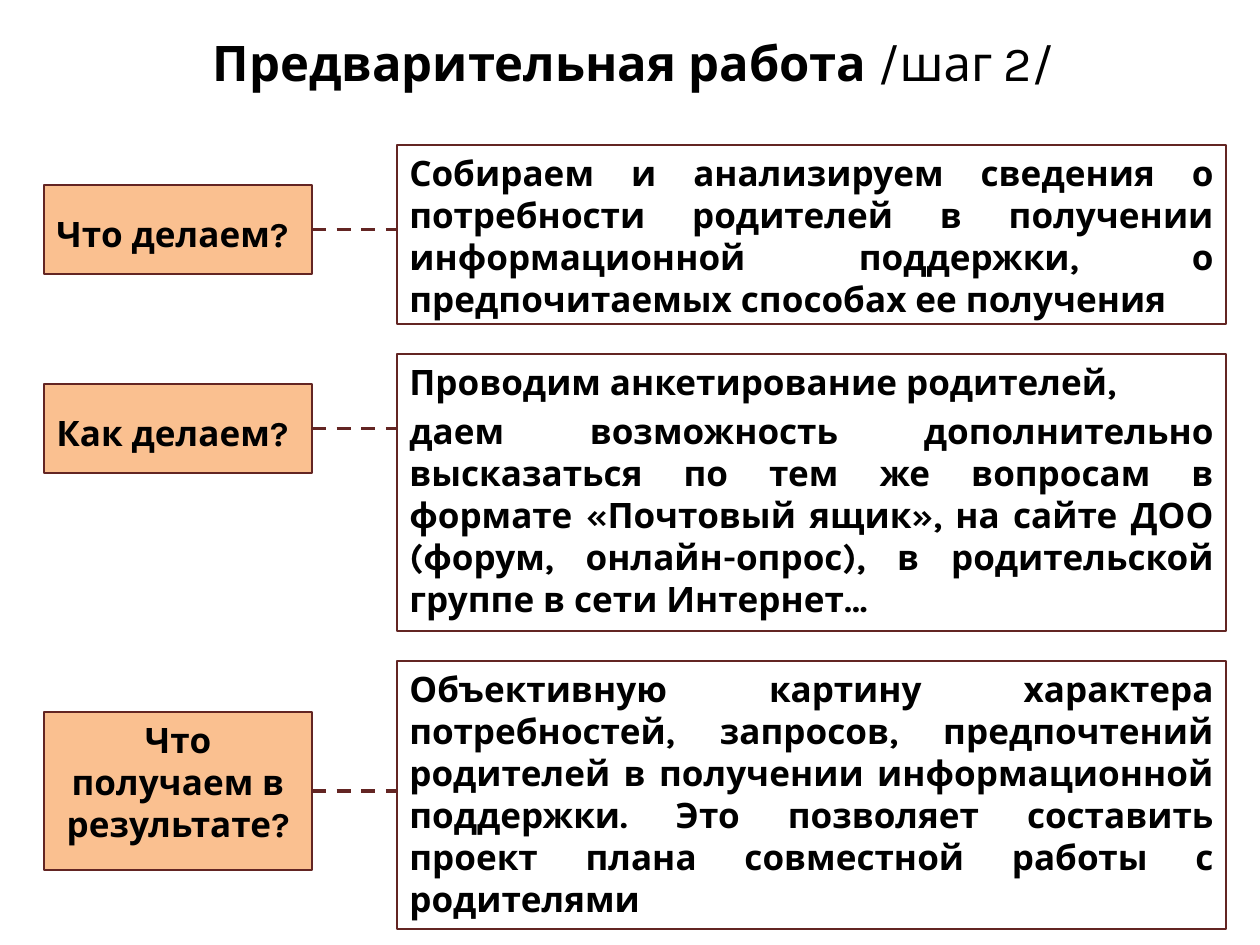
import pptx
import pptx.util
import pptx.dml.color
import pptx.enum.dml
import pptx.enum.shapes
import pptx.enum.text
from dataclasses import dataclass
from pptx.oxml.ns import qn
from lxml import etree

ALIGN = pptx.enum.text.PP_ALIGN


@dataclass(frozen=True)
class Theme:
    font: str = "Karla"
    ink: str = "000000"
    border: str = "632523"
    label_fill: str = "FAC090"
    title_size: int = 28
    text_size: int = 20
    border_width: float = 0.75
    link_width: float = 2


THEME = Theme()


def px(length):
    """126 px make one inch."""
    return pptx.util.Emu(round(length * 914400 / 126))


def rgb(value):
    return pptx.dml.color.RGBColor.from_string(value)


def style_paragraph(paragraph, size, align, bold=True):
    paragraph.alignment = align
    paragraph.font.name = THEME.font
    paragraph.font.size = pptx.util.Pt(size)
    paragraph.font.bold = bold
    paragraph.font.color.rgb = rgb(THEME.ink)


def set_top_frame(frame):
    frame.word_wrap = True
    frame.auto_size = pptx.enum.text.MSO_AUTO_SIZE.NONE
    frame.vertical_anchor = pptx.enum.text.MSO_ANCHOR.TOP


def add_title(slide, box, topic, step):
    title = slide.shapes.title
    title.left, title.top, title.width, title.height = map(px, box)
    set_top_frame(title.text_frame)
    heading = title.text_frame.paragraphs[0]
    style_paragraph(heading, THEME.title_size, ALIGN.CENTER, bold=None)
    for words, bold in ((topic + " ", True), (step, False)):
        run = heading.add_run()
        run.text = words
        run.font.bold = bold


def add_panel(slide, box, paragraphs, align, fill=None):
    panel = slide.shapes.add_shape(
        pptx.enum.shapes.MSO_SHAPE.RECTANGLE, *map(px, box))
    panel.shadow.inherit = False
    if fill:
        panel.fill.solid()
        panel.fill.fore_color.rgb = rgb(fill)
    else:
        panel.fill.background()
    panel.line.color.rgb = rgb(THEME.border)
    panel.line.width = pptx.util.Pt(THEME.border_width)
    set_top_frame(panel.text_frame)
    panel.text_frame.text = "\n".join(paragraphs)
    for paragraph in panel.text_frame.paragraphs:
        style_paragraph(paragraph, THEME.text_size, align)
        paragraph.space_before = pptx.util.Pt(THEME.text_size * 0.2)
    return panel


def add_link(slide, left, right, middle):
    link = slide.shapes.add_connector(
        pptx.enum.shapes.MSO_CONNECTOR.STRAIGHT,
        px(left), px(middle), px(right), px(middle))
    link.line.color.rgb = rgb(THEME.border)
    link.line.width = pptx.util.Pt(THEME.link_width)
    link.line.dash_style = pptx.enum.dml.MSO_LINE.DASH
    etree.SubElement(link._element.spPr, qn("a:effectLst"))


def add_step(slide, box, question, answer, label_offset, label_height):
    """A question label on the left, linked to its answer on the right."""
    left, top, width, height = box
    label_width, answer_offset = 268, 353
    label_top = top + label_offset
    one_line = len(question) < 15

    # Answer
    add_panel(slide, (left + answer_offset, top, width - answer_offset, height),
              answer, ALIGN.JUSTIFY)

    # Question label
    label = add_panel(slide, (left, label_top, label_width, label_height), [question],
                      ALIGN.JUSTIFY if one_line else ALIGN.CENTER, THEME.label_fill)
    wording = label.text_frame.paragraphs[0]
    wording.space_before = wording.space_after = pptx.util.Pt(12)
    if one_line:
        wording.line_spacing = 1.5

    # Dashed link
    add_link(slide, left + label_width, left + answer_offset,
             label_top + label_height / 2)


# Top, height, question, answer paragraphs, label offset, label height
STEPS = [
    (145, 179, "Что делаем?",
     ["Собираем и анализируем сведения о потребности родителей в получении "
      "информационной поддержки, о предпочитаемых способах ее получения"], 40, 89),
    (354, 277, "Как делаем?",
     ["Проводим анкетирование родителей,",
      "даем возможность дополнительно высказаться по тем же вопросам в формате "
      "«Почтовый ящик», на сайте ДОО (форум, онлайн-опрос), в родительской "
      "группе в сети Интернет…"], 30, 89),
    (661, 268, "Что получаем в результате?",
     ["Объективную картину характера потребностей, запросов, предпочтений "
      "родителей в получении информационной поддержки. Это позволяет составить "
      "проект плана совместной работы с родителями"], 51, 158),
]


def main():
    deck = pptx.Presentation()
    deck.slide_width, deck.slide_height = px(1260), px(945)
    slide = deck.slides.add_slide(deck.slide_layouts.get_by_name("Title Only"))
    add_title(slide, (35, 26, 1196, 110), "Предварительная работа", "/шаг 2/")
    for top, height, question, answer, label_offset, label_height in STEPS:
        add_step(slide, (44, top, 1182, height), question, answer,
                 label_offset, label_height)
    deck.save("out.pptx")


if __name__ == "__main__":
    main()
